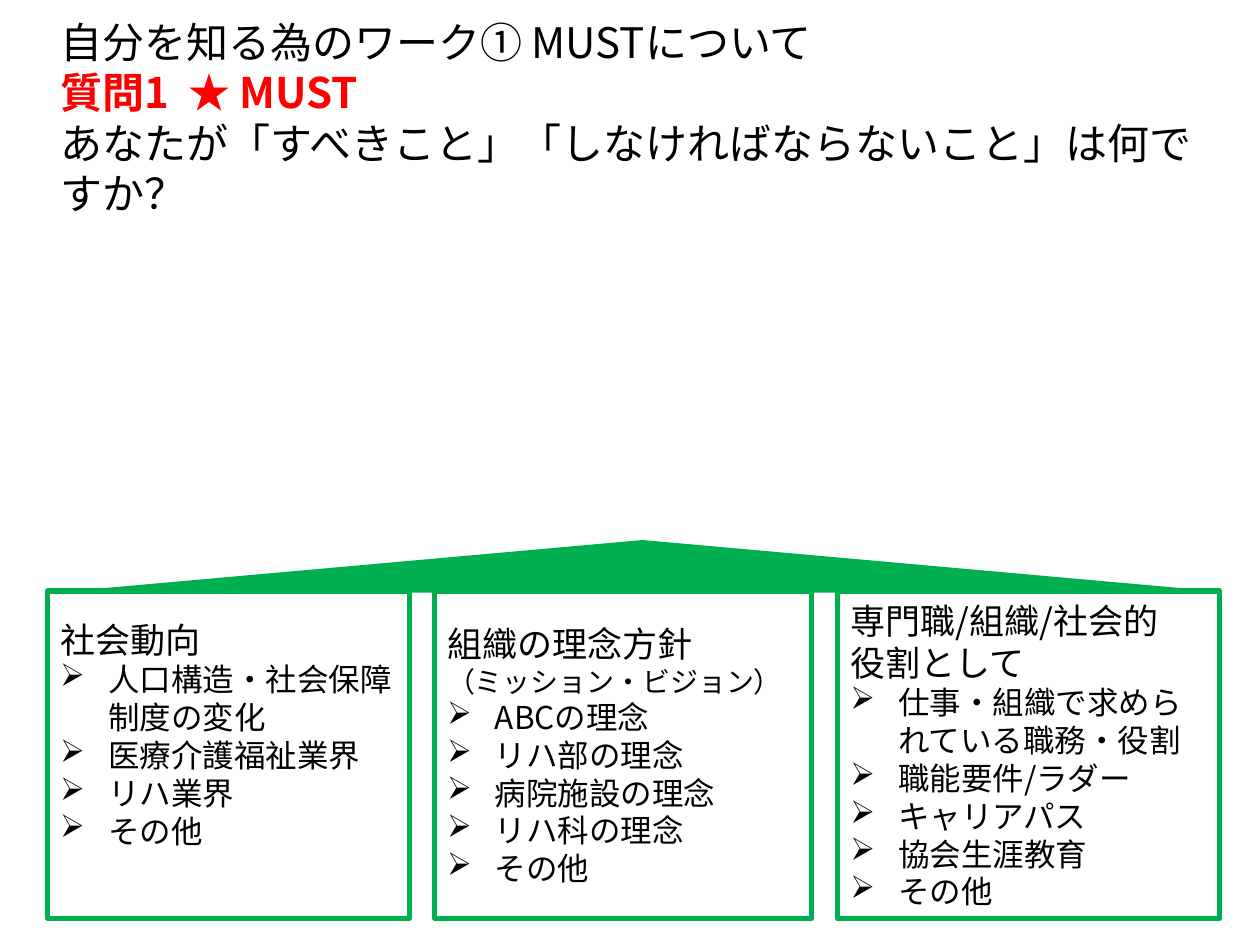
"""Build the MUST self-understanding worksheet slide."""
from lxml import etree
from pptx import Presentation
from pptx.dml.color import RGBColor
from pptx.enum.shapes import MSO_SHAPE
from pptx.enum.text import MSO_ANCHOR, MSO_AUTO_SIZE, PP_ALIGN
from pptx.oxml.ns import qn
from pptx.util import Inches, Pt

RECTANGLE = MSO_SHAPE.RECTANGLE
TRIANGLE = MSO_SHAPE.ISOSCELES_TRIANGLE
TOP, MIDDLE = MSO_ANCHOR.TOP, MSO_ANCHOR.MIDDLE
LEFT = PP_ALIGN.LEFT
NO_AUTOFIT = MSO_AUTO_SIZE.NONE
FONT = "Noto Sans CJK JP"
COLORS = {"text": "000000", "accent": "FF0000", "green": "00B050"}


def add_text(frame, text, size=18, color="text", bold=False, bullet=None):
    paragraph = frame.paragraphs[0] if not frame.text else frame.add_paragraph()
    paragraph.alignment = LEFT
    run = paragraph.add_run()
    run.text = text
    run.font.name = FONT
    run.font.size = Pt(size)
    run.font.bold = bold
    run.font.color.rgb = RGBColor.from_string(COLORS[color])
    east_asian = etree.SubElement(run.font._element, qn("a:ea"))
    east_asian.set("typeface", FONT)
    if bullet:
        properties = paragraph._p.get_or_add_pPr()
        properties.set("marL", str(Inches(0.38)))
        properties.set("indent", str(-Inches(0.38)))
        etree.SubElement(properties, qn("a:buChar")).set("char", bullet)


def add_green_shape(kind, left, top, width, height, line_width):
    shape = slide.shapes.add_shape(
        kind, Inches(left), Inches(top), Inches(width), Inches(height))
    shape.shadow.inherit = False
    shape.line.color.rgb = RGBColor.from_string(COLORS["green"])
    shape.line.width = Pt(line_width)
    return shape


presentation = Presentation()
presentation.slide_width = Inches(10)
presentation.slide_height = Inches(7.5)
slide = presentation.slides.add_slide(presentation.slide_layouts[5])

title = slide.shapes.title
title.left, title.top = Inches(0.38), Inches(0.08)
title.width, title.height = Inches(9.45), Inches(4.2)
title_frame = title.text_frame
title_frame.word_wrap = True
title_frame.auto_size = NO_AUTOFIT
title_frame.vertical_anchor = TOP
add_text(title_frame, "自分を知る為のワーク① MUSTについて", size=24)
add_text(title_frame, "質問1  ★ MUST", size=24, color="accent", bold=True)
add_text(title_frame, "あなたが「すべきこと」「しなければならないこと」は何ですか？", size=24)

boxes = [
    (0.38, 2.87, 0.38, [("社会動向", 20)],
     ["人口構造・社会保障制度の変化", "医療介護福祉業界", "リハ業界", "その他"]),
    (3.45, 2.99, 0.05, [("組織の理念方針", 20), ("（ミッション・ビジョン）", 16)],
     ["ABCの理念", "リハ部の理念", "病院施設の理念", "リハ科の理念", "その他"]),
    (6.65, 3.03, 0.05, [("専門職/組織/社会的", 20), ("役割として", 20)],
     ["仕事・組織で求められている職務・役割", "職能要件/ラダー", "キャリアパス",
      "協会生涯教育", "その他"]),
]
for left, width, bottom_margin, headings, items in boxes:
    box = add_green_shape(RECTANGLE, left, 4.69, width, 2.6, 3)
    box.fill.background()
    frame = box.text_frame
    frame.word_wrap = True
    frame.vertical_anchor = MIDDLE
    frame.margin_bottom = Inches(bottom_margin)
    for heading, size in headings:
        add_text(frame, heading, size=size)
    for item in items:
        add_text(frame, item, bullet="➢")

roof = add_green_shape(TRIANGLE, 0.73, 4.3, 8.74, 0.39, 2)
roof.fill.solid()
roof.fill.fore_color.rgb = RGBColor.from_string(COLORS["green"])

presentation.save("out.pptx")
